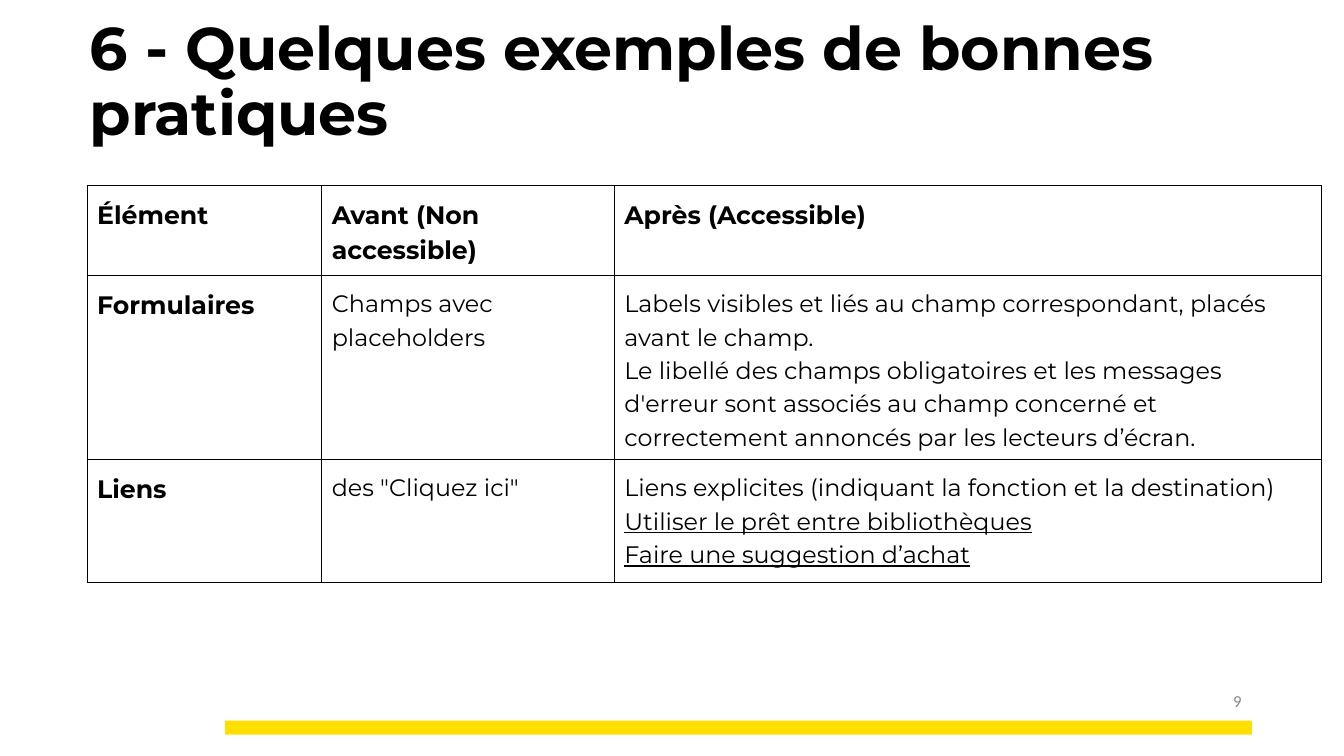
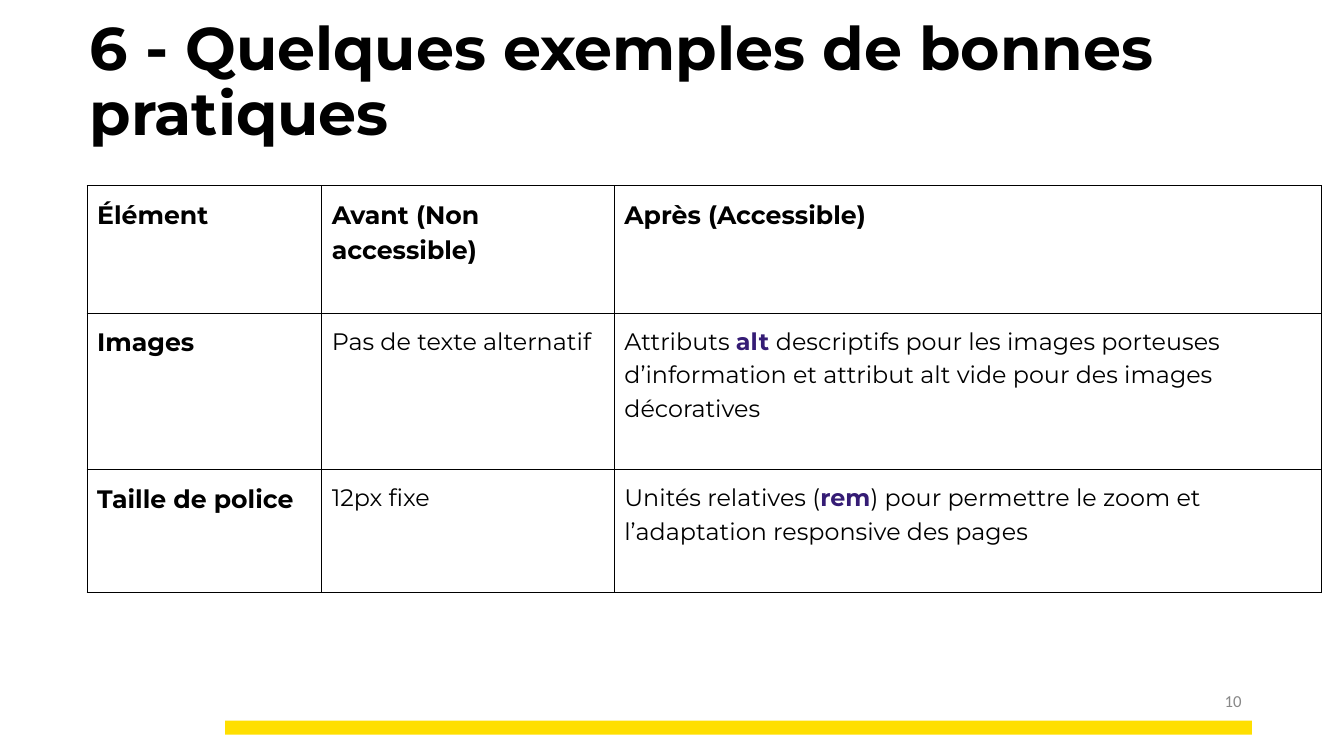
from lxml import etree
from pptx import Presentation
from pptx.dml.color import RGBColor
from pptx.enum.shapes import MSO_SHAPE
from pptx.enum.text import MSO_ANCHOR, PP_ALIGN
from pptx.oxml.ns import qn
from pptx.util import Pt

RECT = MSO_SHAPE.RECTANGLE
BOTTOM, MIDDLE = MSO_ANCHOR.BOTTOM, MSO_ANCHOR.MIDDLE
RIGHT = PP_ALIGN.RIGHT

COLORS = {"text": "000000", "code": "351C75", "band": "FFDF00", "number": "888888"}
FONT, NUMBER_FONT = "Montserrat", "Calibri"
CODE = {"color": "code", "bold": True}
LINK = {"underline": True}

TITLE = "6 - Quelques exemples de bonnes pratiques"
HEADER = ["Élément", "Avant (Non accessible)", "Après (Accessible)"]
FIRST_NUMBER = 9

# A cell is a string, or a list of strings and (string, format) pairs.
SLIDES = [
    {
        "heights": [63.4, 87.8, 87.8],
        "rows": [
            ["Formulaires", "Champs avec placeholders",
             "Labels visibles et liés au champ correspondant, placés avant le champ.\n"
             "Le libellé des champs obligatoires et les messages d'erreur sont associés "
             "au champ concerné et correctement annoncés par les lecteurs d’écran."],
            ["Liens", 'des "Cliquez ici"',
             ["Liens explicites (indiquant la fonction et la destination)\n",
              ("Utiliser le prêt entre bibliothèques\nFaire une suggestion d’achat", LINK)]],
        ],
    },
    {
        "heights": [91, 111.8, 87.8],
        "rows": [
            ["Images", "Pas de texte alternatif",
             ["Attributs ", ("alt ", CODE),
              "descriptifs pour les images porteuses d’information et attribut alt vide "
              "pour des images décoratives"]],
            ["Taille de police", "12px fixe",
             ["Unités relatives (", ("rem", CODE),
              ") pour permettre le zoom et l’adaptation responsive des pages"]],
        ],
    },
]

SLIDE_W, SLIDE_H = 960, 540
TITLE_BOX = (57, 41, 837, 69)
NUMBER_BOX = (852, 486, 42, 29)
BAND_BOX = (160.8, 514.8, 733.4, 10)
TABLE_LEFT, TABLE_TOP = 62.2, 132.5
COL_WIDTHS = [167.6, 209, 505.4]
CELL_INSET = 7.2
BORDER_WIDTH = 0.6


def rgb(name):
    return RGBColor.from_string(COLORS[name])


def write(tf, content, size, font=FONT, color="text", bold=False, underline=None,
          align=None, line=None, after=None):
    """Fill the first paragraph; each run may override colour, bold and underline."""
    base = {"color": color, "bold": bold, "underline": underline}
    p = tf.paragraphs[0]
    p.alignment, p.line_spacing = align, line
    if after is not None:
        p.space_after = Pt(after)
    for part in [content] if isinstance(content, str) else content:
        text, change = (part, {}) if isinstance(part, str) else part
        fmt = {**base, **change}
        for i, piece in enumerate(text.split("\n")):
            if i:
                p.add_line_break()
            if not piece:
                continue
            r = p.add_run()
            r.text = piece
            r.font.name, r.font.size = font, Pt(size)
            r.font.bold, r.font.underline = fmt["bold"], fmt["underline"]
            r.font.color.rgb = rgb(fmt["color"])


def add_text(s, box, content, anchor, **fmt):
    tf = s.shapes.add_textbox(*map(Pt, box)).text_frame
    tf.word_wrap = True
    tf.vertical_anchor = anchor
    tf.margin_left = tf.margin_right = Pt(7.2)
    tf.margin_top = tf.margin_bottom = Pt(3.6)
    write(tf, content, **fmt)


def add_frame(s, number):
    """Draw what every slide shares: band, page number and title."""
    band = s.shapes.add_shape(RECT, *map(Pt, BAND_BOX))
    band.shadow.inherit = False
    band.fill.solid()
    band.fill.fore_color.rgb = rgb("band")
    band.line.fill.background()
    add_text(s, NUMBER_BOX, str(number), MIDDLE, size=12, font=NUMBER_FONT,
             color="number", align=RIGHT)
    add_text(s, TITLE_BOX, TITLE, BOTTOM, size=43, bold=True, line=0.9)


def set_borders(cell):
    tcPr = cell._tc.get_or_add_tcPr()
    for i, side in enumerate(("lnL", "lnR", "lnT", "lnB")):
        ln = etree.Element(qn(f"a:{side}"), w=str(Pt(BORDER_WIDTH)))
        fill = etree.SubElement(ln, qn("a:solidFill"))
        etree.SubElement(fill, qn("a:srgbClr"), val=COLORS["text"])
        tcPr.insert(i, ln)


def add_comparison(s, rows, heights):
    rows = [HEADER] + rows
    table = s.shapes.add_table(len(rows), len(HEADER), Pt(TABLE_LEFT), Pt(TABLE_TOP),
                               Pt(sum(COL_WIDTHS)), Pt(sum(heights))).table
    table.first_row = table.horz_banding = False
    for column, width in zip(table.columns, COL_WIDTHS):
        column.width = Pt(width)
    for i, (row, height) in enumerate(zip(rows, heights)):
        table.rows[i].height = Pt(height)
        for j, content in enumerate(row):
            cell = table.cell(i, j)
            cell.fill.background()
            cell.margin_left = cell.margin_right = Pt(CELL_INSET)
            cell.margin_top = cell.margin_bottom = Pt(CELL_INSET)
            set_borders(cell)
            heading = i == 0 or j == 0
            write(cell.text_frame, content, size=18 if heading else 17,
                  bold=heading, line=1.15, after=24)


def main():
    prs = Presentation()
    prs.slide_width, prs.slide_height = Pt(SLIDE_W), Pt(SLIDE_H)
    for number, content in enumerate(SLIDES, FIRST_NUMBER):
        s = prs.slides.add_slide(prs.slide_layouts[6])
        add_frame(s, number)
        add_comparison(s, **content)
    prs.save("out.pptx")


if __name__ == "__main__":
    main()
